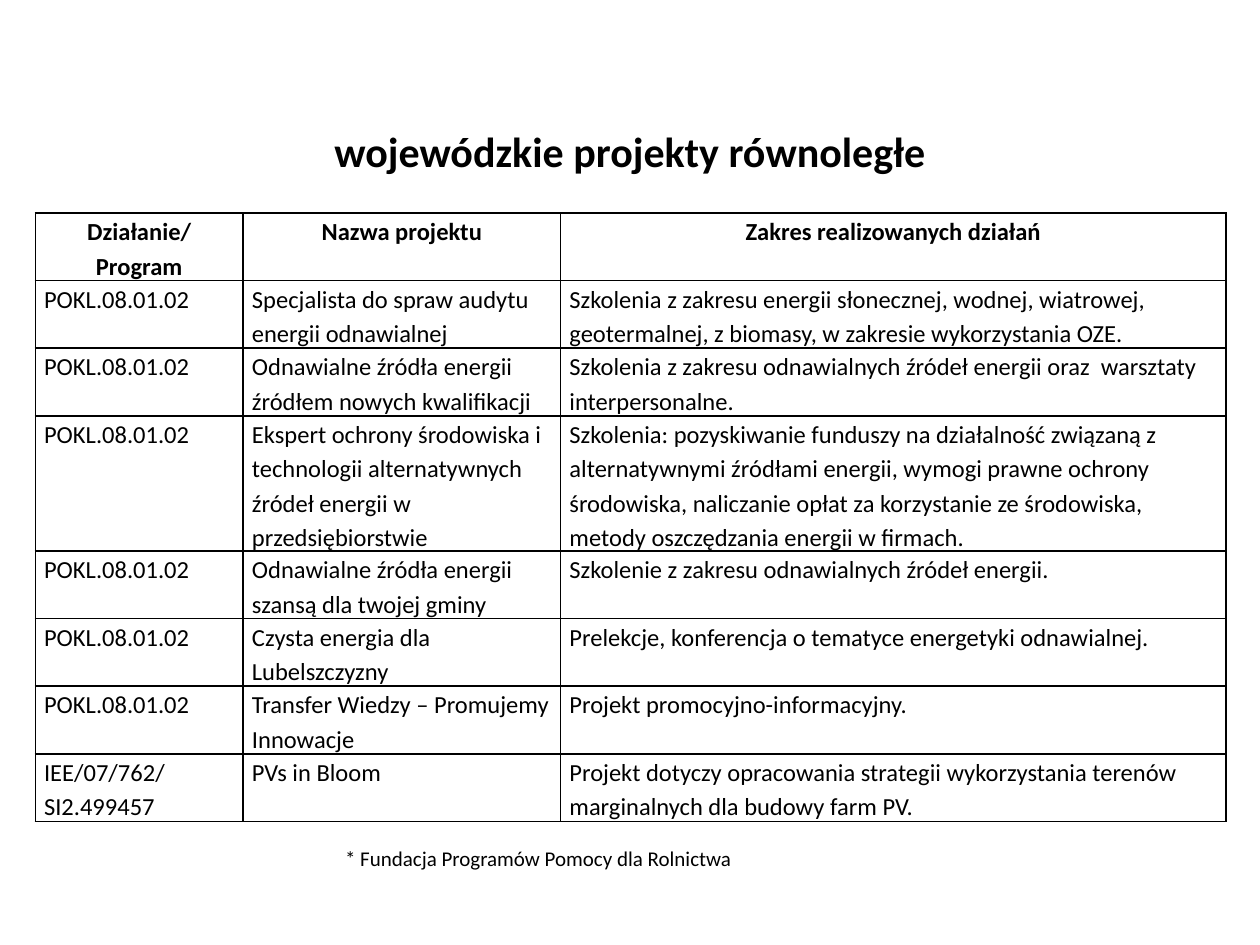
from lxml import etree
from pptx import Presentation
from pptx.dml.color import RGBColor
from pptx.enum.text import MSO_ANCHOR, PP_ALIGN
from pptx.oxml.ns import qn
from pptx.util import Inches, Pt

CENTER, LEFT = PP_ALIGN.CENTER, PP_ALIGN.LEFT
MIDDLE = MSO_ANCHOR.MIDDLE
COLORS = {"ink": "000000", "paper": "FFFFFF"}
FONT = "Calibri"

# Content
TITLE = "wojewódzkie projekty równoległe"
FOOTNOTE = "* Fundacja Programów Pomocy dla Rolnictwa"
PROGRAM = "POKL.08.01.02"
HEADER = ("Działanie/Program", "Nazwa projektu", "Zakres realizowanych działań")
PROJECTS = [
    (PROGRAM, "Specjalista do spraw audytu energii odnawialnej",
     "Szkolenia z zakresu energii słonecznej, wodnej, wiatrowej,\n"
     "geotermalnej, z biomasy, w zakresie wykorzystania OZE."),
    (PROGRAM, "Odnawialne źródła energii źródłem nowych kwalifikacji",
     "Szkolenia z zakresu odnawialnych źródeł energii oraz  warsztaty interpersonalne."),
    (PROGRAM, "Ekspert ochrony środowiska i technologii alternatywnych "
     "źródeł energii w przedsiębiorstwie",
     "Szkolenia: pozyskiwanie funduszy na działalność związaną z\n"
     "alternatywnymi źródłami energii, wymogi prawne ochrony środowiska, naliczanie "
     "opłat za korzystanie ze środowiska, metody oszczędzania energii w firmach."),
    (PROGRAM, "Odnawialne źródła energii szansą dla twojej gminy",
     "Szkolenie z zakresu odnawialnych źródeł energii."),
    (PROGRAM, "Czysta energia dla Lubelszczyzny",
     "Prelekcje, konferencja o tematyce energetyki odnawialnej."),
    (PROGRAM, "Transfer Wiedzy – Promujemy Innowacje",
     "Projekt promocyjno-informacyjny."),
    ("IEE/07/762/SI2.499457", "PVs in Bloom",
     "Projekt dotyczy opracowania strategii wykorzystania terenów "
     "marginalnych dla budowy farm PV."),
]

# Table grid in inches; rows grow to fit their text
COLUMNS = (1.65, 2.52, 5.28)
ROWS = (0.2, 0.49, 0.51, 0.7, 0.52, 0.4, 0.4, 0.4)
TABLE_LEFT, TABLE_TOP, TABLE_HEIGHT = 0.28, 1.69, 4.56


def write(frame, text, size, bold=False, align=LEFT, spacing=None):
    frame.word_wrap = True
    frame.text = text
    for paragraph in frame.paragraphs:
        paragraph.alignment = align
        paragraph.line_spacing = spacing
        font = paragraph.font
        font.name, font.size, font.bold = FONT, Pt(size), bold
        font.color.rgb = RGBColor.from_string(COLORS["ink"])


def add_borders(cell):
    properties = cell._tc.get_or_add_tcPr()
    for index, side in enumerate(("a:lnL", "a:lnR", "a:lnT", "a:lnB")):
        line = etree.Element(qn(side), w=str(Pt(1)))
        fill = etree.SubElement(line, qn("a:solidFill"))
        etree.SubElement(fill, qn("a:srgbClr"), val=COLORS["ink"])
        properties.insert(index, line)


def add_text(slide, box, text, size, **style):
    shape = slide.shapes.add_textbox(*map(Inches, box))
    write(shape.text_frame, text, size, **style)
    return shape


presentation = Presentation()
presentation.slide_width, presentation.slide_height = Inches(10), Inches(7.5)
slide = presentation.slides.add_slide(presentation.slide_layouts[6])

# Title
title = add_text(slide, (0, 0.84, 10, 0.71), TITLE, 24, bold=True, align=CENTER)
title.text_frame.vertical_anchor = MIDDLE

# Project table
table_shape = slide.shapes.add_table(
    len(ROWS), len(COLUMNS), Inches(TABLE_LEFT), Inches(TABLE_TOP),
    Inches(sum(COLUMNS)), Inches(TABLE_HEIGHT))
table = table_shape.table
table.first_row = table.horz_banding = False
for column, width in zip(table.columns, COLUMNS):
    column.width = Inches(width)
for row, height in zip(table.rows, ROWS):
    row.height = Inches(height)
table_shape.height = Inches(TABLE_HEIGHT)

for row_index, texts in enumerate([HEADER, *PROJECTS]):
    is_header = row_index == 0
    for column_index, text in enumerate(texts):
        cell = table.cell(row_index, column_index)
        cell.margin_left = cell.margin_right = Inches(0.07)
        cell.margin_top = cell.margin_bottom = 0
        cell.fill.solid()
        cell.fill.fore_color.rgb = RGBColor.from_string(COLORS["paper"])
        add_borders(cell)
        write(cell.text_frame, text, 14, bold=is_header,
              align=CENTER if is_header else LEFT, spacing=1.15)

# Footnote
add_text(slide, (2.64, 6.66, 4.25, 0.3), FOOTNOTE, 12)

presentation.save("out.pptx")
